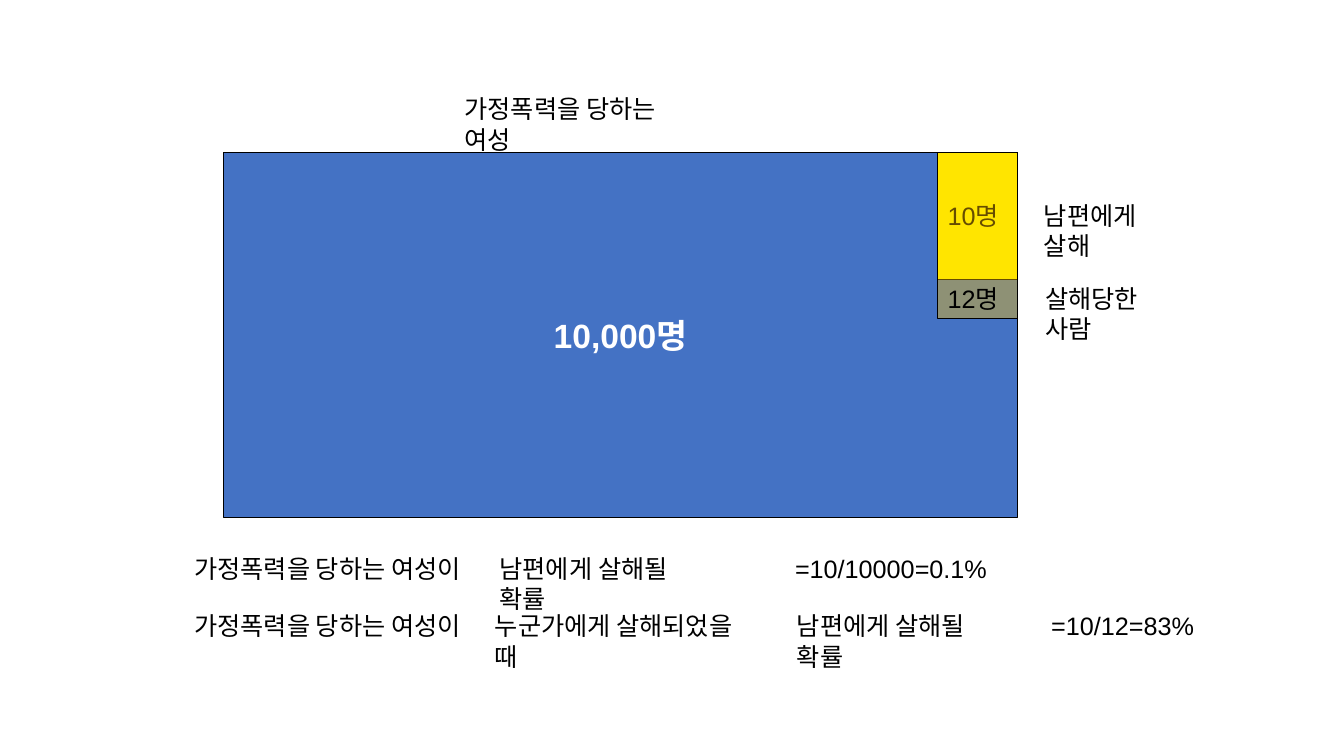
from lxml import etree
from pptx import Presentation
from pptx import util as u
from pptx.dml.color import RGBColor
from pptx.enum import shapes, text
from pptx.oxml import ns

COLORS = {
    "women": "4472C4",
    "by_husband": "FFFF00",
    "murdered": "FFC000",
    "ink": "000000",
    "light": "FFFFFF",
}
FONT = "Arial"


def format_text(frame, wording, size=18, color="ink", bold=False):
    frame.text = wording
    for run in frame.paragraphs[0].runs:
        run.font.name = FONT
        run.font.size = u.Pt(size)
        run.font.bold = bold
        run.font.color.rgb = RGBColor.from_string(COLORS[color])


def add_label(slide, left, top, width, wording):
    label = slide.shapes.add_textbox(u.Pt(left), u.Pt(top), u.Pt(width), u.Pt(29))
    format_text(label.text_frame, wording)
    label.text_frame.word_wrap = True
    label.text_frame.auto_size = text.MSO_AUTO_SIZE.SHAPE_TO_FIT_TEXT


def add_group_area(slide, box, fill, wording, anchor, align, opacity=None, **style):
    area = slide.shapes.add_shape(
        shapes.MSO_SHAPE.RECTANGLE, *(u.Pt(length) for length in box))
    area.shadow.inherit = False
    area.fill.solid()
    area.fill.fore_color.rgb = RGBColor.from_string(COLORS[fill])
    area.line.color.rgb = RGBColor.from_string(COLORS["ink"])
    area.line.width = u.Pt(0.75)
    if opacity is not None:
        tint = area.fill._xPr.find(ns.qn("a:solidFill"))[0]
        etree.SubElement(tint, ns.qn("a:alpha"), val=str(opacity * 1000))
    format_text(area.text_frame, wording, **style)
    area.text_frame.vertical_anchor = anchor
    area.text_frame.paragraphs[0].alignment = align


def add_diagram(slide, left, top, width, height):
    """Nested areas: all women, those murdered, those murdered by a husband."""
    strip_width, husband_height, murdered_height = 56.9, 90.7, 118.8
    right = left + width
    strip_left = right - strip_width
    middle, bottom = text.MSO_ANCHOR.MIDDLE, text.MSO_ANCHOR.BOTTOM
    start, center = text.PP_ALIGN.LEFT, text.PP_ALIGN.CENTER

    # Areas, the translucent one on top
    add_group_area(slide, (left, top, width, height), "women", "10,000명",
                   middle, center, size=24, color="light", bold=True)
    add_group_area(slide, (strip_left, top, strip_width, husband_height),
                   "by_husband", "10명", middle, start)
    add_group_area(slide, (strip_left, top, strip_width, murdered_height),
                   "murdered", "12명", bottom, start, opacity=40)

    # Captions above and to the right
    add_label(slide, left + 164.9, top - 45.4, 186, "가정폭력을 당하는 여성")
    add_label(slide, right + 12, top + 31, 116, "남편에게 살해")
    add_label(slide, right + 13, top + 90, 116, "살해당한 사람")


def add_probabilities(slide, left, top, row_step):
    """Each row reads as one sentence: offset, width and wording of its parts."""
    subject = (0, 210, "가정폭력을 당하는 여성이")
    outcome = "남편에게 살해될 확률"
    rows = [
        [subject, (218, 170, outcome), (429, 166, "=10/10000=0.1%")],
        [subject, (214.6, 203, "누군가에게 살해되었을 때"),
         (430.4, 170, outcome), (612, 127, "=10/12=83%")],
    ]
    for number, row in enumerate(rows):
        for offset, width, wording in row:
            add_label(slide, left + offset, top + number * row_step, width, wording)


def main():
    deck = Presentation()
    deck.slide_width, deck.slide_height = u.Pt(960), u.Pt(540)
    slide = deck.slides.add_slide(deck.slide_layouts[6])
    add_diagram(slide, 159.9, 108.7, 566.7, 260.7)
    add_probabilities(slide, 131.8, 391.7, 41)
    deck.save("out.pptx")


if __name__ == "__main__":
    main()
